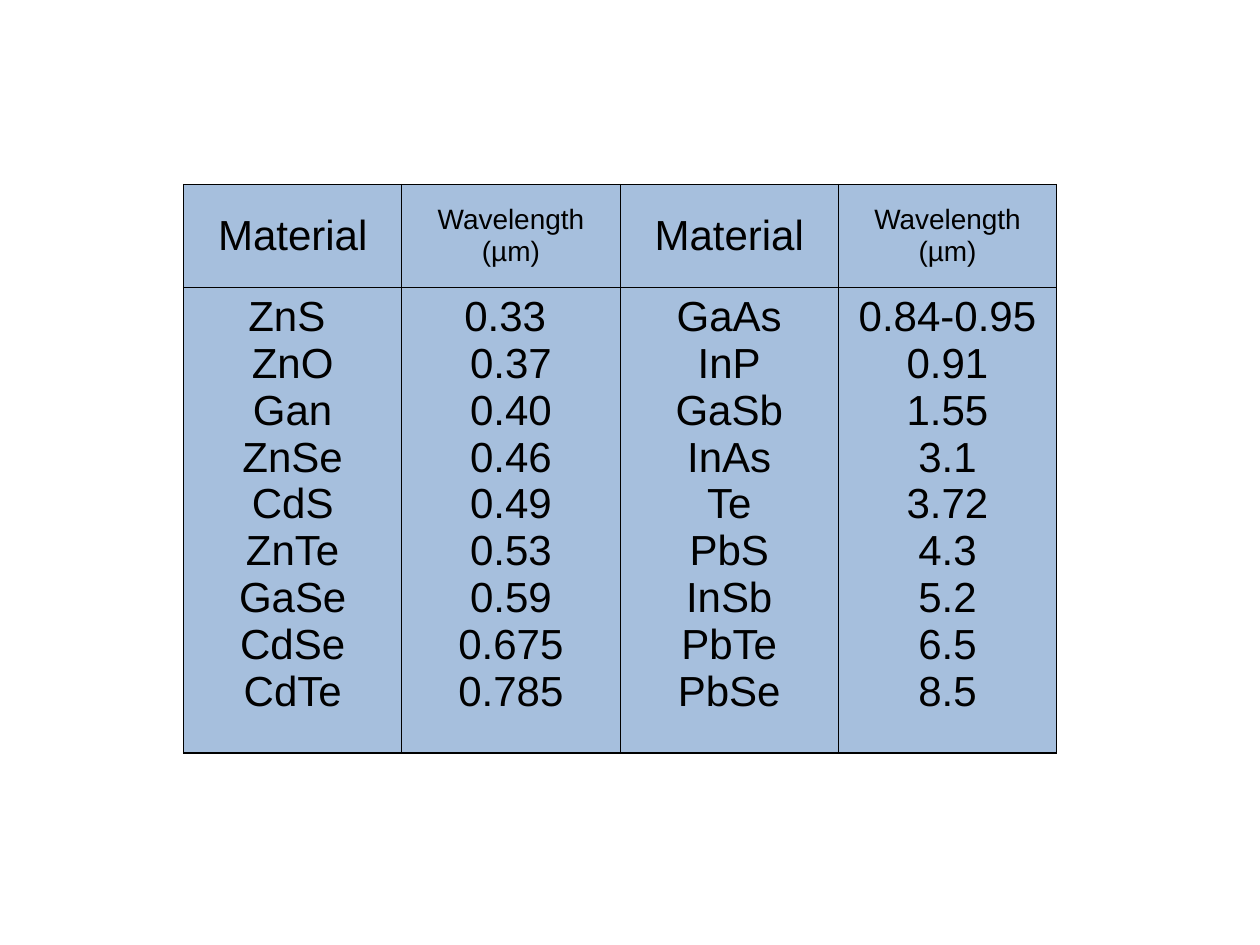
from dataclasses import dataclass

from lxml import etree
from pptx import Presentation
from pptx import util as u
from pptx.dml.color import RGBColor
from pptx.enum import text
from pptx.oxml import ns


@dataclass(frozen=True)
class Theme:
    font: str = "Arial"
    ink: str = "000000"
    panel: str = "4F81BD"
    panel_alpha: int = 50
    border: float = 0.75
    large: int = 24
    small: int = 16


class SlideBuilder:
    def __init__(self, slide, theme):
        self.slide = slide
        self.theme = theme

    def table(self, left, top, column_width, row_heights, columns):
        width = u.Cm(column_width * len(columns))
        height = u.Cm(sum(row_heights))
        frame = self.slide.shapes.add_table(
            len(row_heights), len(columns), u.Cm(left), u.Cm(top), width, height)
        grid = frame.table
        grid.first_row = grid.horz_banding = False
        for row, row_height in zip(grid.rows, row_heights):
            row.height = u.Cm(row_height)
        for index, (heading, size, entries) in enumerate(columns):
            grid.columns[index].width = u.Cm(column_width)
            self.cell(grid.cell(0, index), heading, size, text.MSO_ANCHOR.MIDDLE)
            self.cell(grid.cell(1, index), "\n".join(entries),
                      self.theme.large, text.MSO_ANCHOR.TOP)

    def cell(self, cell, wording, size, anchor):
        cell.vertical_anchor = anchor
        paragraph = cell.text_frame.paragraphs[0]
        paragraph.text = wording
        paragraph.alignment = text.PP_ALIGN.CENTER
        font_format = {"name": self.theme.font, "size": u.Pt(size), "bold": False}
        for run in paragraph.runs:
            for attribute, value in font_format.items():
                setattr(run.font, attribute, value)
            run.font.color.rgb = RGBColor.from_string(self.theme.ink)
        self.panel(cell)
        self.borders(cell)

    def panel(self, cell):
        cell.fill.solid()
        cell.fill.fore_color.rgb = RGBColor.from_string(self.theme.panel)
        color = cell._tc.tcPr.find(ns.qn("a:solidFill"))[0]
        etree.SubElement(color, ns.qn("a:alpha"),
                         val=str(self.theme.panel_alpha * 1000))

    def borders(self, cell):
        for position, side in enumerate("LRTB"):
            line = etree.Element(ns.qn(f"a:ln{side}"), w=str(u.Pt(self.theme.border)))
            fill = etree.SubElement(line, ns.qn("a:solidFill"))
            etree.SubElement(fill, ns.qn("a:srgbClr"), val=self.theme.ink)
            cell._tc.tcPr.insert(position, line)


def main():
    theme = Theme()
    presentation = Presentation()
    presentation.slide_width = u.Cm(25.4)
    presentation.slide_height = u.Cm(19.05)
    slide = presentation.slides.add_slide(presentation.slide_layouts[6])

    material = ("Material", theme.large)
    wavelength = ("Wavelength (µm)", theme.small)
    columns = [
        (*material, ["ZnS ", "ZnO", "Gan", "ZnSe", "CdS",
                     "ZnTe", "GaSe", "CdSe", "CdTe"]),
        (*wavelength, ["0.33 ", "0.37", "0.40", "0.46", "0.49",
                       "0.53", "0.59", "0.675", "0.785"]),
        (*material, ["GaAs", "InP", "GaSb", "InAs", "Te",
                     "PbS", "InSb", "PbTe", "PbSe"]),
        (*wavelength, ["0.84-0.95", "0.91", "1.55", "3.1", "3.72",
                       "4.3", "5.2", "6.5", "8.5"]),
    ]
    SlideBuilder(slide, theme).table(
        left=3.7, top=3.72, column_width=4.4, row_heights=[2.07, 9.39], columns=columns)
    presentation.save("out.pptx")


if __name__ == "__main__":
    main()
